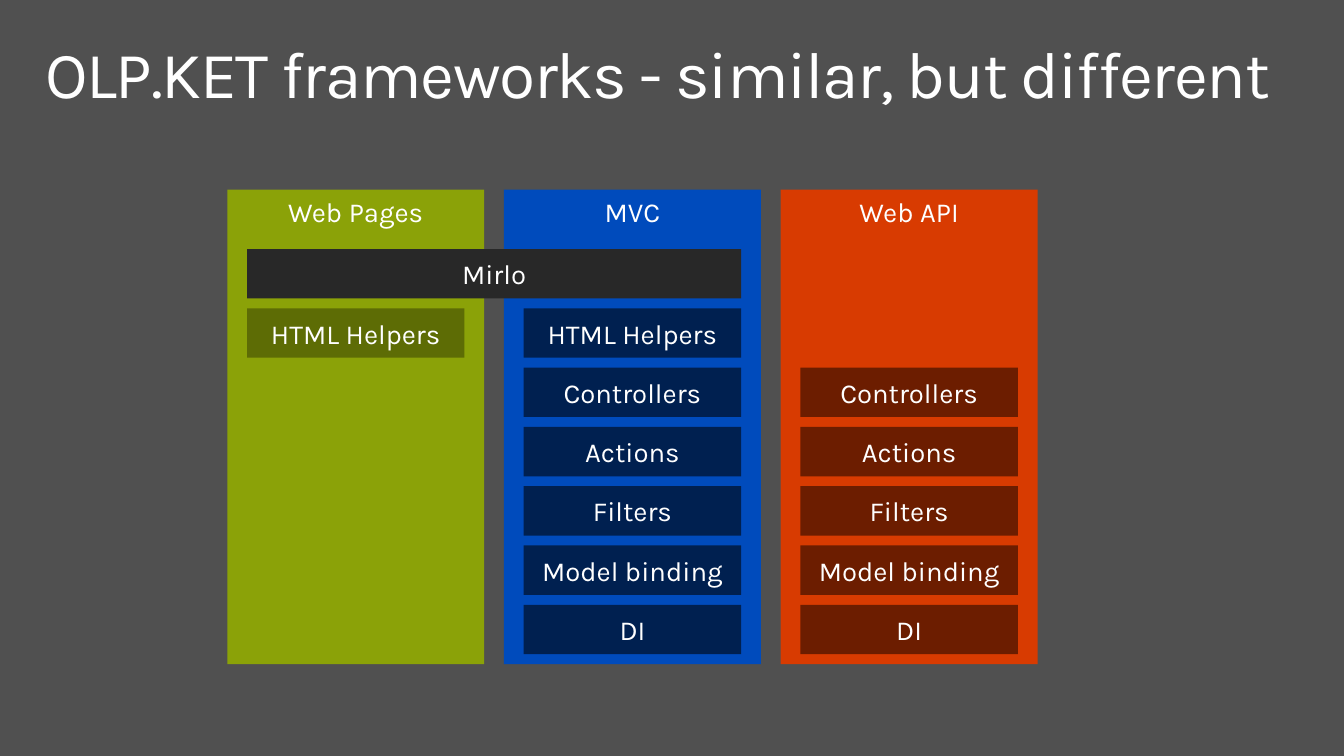
"""Build a slide comparing the parts of three web frameworks."""
from pptx import Presentation
from pptx.dml.color import RGBColor
from pptx.enum import shapes, text
from pptx.util import Inches, Pt

BACKGROUND = RGBColor(0x50, 0x50, 0x50)
WHITE = RGBColor(0xFF, 0xFF, 0xFF)
GREEN = RGBColor(0x8B, 0xA2, 0x08)
DARK_GREEN = RGBColor(0x5D, 0x6C, 0x05)
BLUE = RGBColor(0x00, 0x4B, 0xBC)
DARK_BLUE = RGBColor(0x00, 0x20, 0x50)
ORANGE = RGBColor(0xD8, 0x3B, 0x01)
DARK_ORANGE = RGBColor(0x6C, 0x1D, 0x00)
CHARCOAL = RGBColor(0x28, 0x28, 0x28)

HEADLINE = "OLP.KET frameworks - similar, but different"
SHARED_ENGINE = "Mirlo"
FEATURES = ["HTML Helpers", "Controllers", "Actions", "Filters", "Model binding", "DI"]
FRAMEWORKS = [
    ("Web Pages", GREEN, DARK_GREEN, FEATURES[:1]),
    ("MVC", BLUE, DARK_BLUE, FEATURES),
    ("Web API", ORANGE, DARK_ORANGE, FEATURES[1:]),
]

PANEL_LEFT, PANEL_TOP, PANEL_WIDTH, PANEL_HEIGHT = 2.3, 1.92, 2.6, 4.8
PANEL_GAP = PADDING = 0.2
PANEL_STEP = PANEL_WIDTH + PANEL_GAP
FEATURE_WIDTH = PANEL_WIDTH - 2 * PADDING
ROW_TOP, ROW_HEIGHT, ROW_STEP = 2.52, 0.5, 0.6


def write(holder, words, size=20, align=text.PP_ALIGN.CENTER,
          anchor=text.MSO_ANCHOR.MIDDLE, side=0, edge=0.05, line_spacing=None, tracking=None):
    """Put formatted text into a shape or placeholder."""
    frame = holder.text_frame
    frame.word_wrap = True
    frame.auto_size = text.MSO_AUTO_SIZE.NONE
    frame.vertical_anchor = anchor
    frame.margin_left = frame.margin_right = Inches(side)
    frame.margin_top = frame.margin_bottom = Inches(edge)
    paragraph = frame.paragraphs[0]
    paragraph.alignment = align
    paragraph.line_spacing = line_spacing
    run = paragraph.add_run()
    run.text = words
    run.font.name = "Karla"
    run.font.size = Pt(size)
    run.font.color.rgb = WHITE
    if tracking is not None:
        run.font._element.set("spc", str(tracking))


def add_block(slide, words, left, top, width, height, color, **text_format):
    """Draw a flat labelled rectangle."""
    block = slide.shapes.add_shape(shapes.MSO_SHAPE.RECTANGLE, Inches(left), Inches(top),
                                   Inches(width), Inches(height))
    block.shadow.inherit = False
    block.fill.solid()
    block.fill.fore_color.rgb = color
    block.line.fill.background()
    write(block, words, **text_format)


def main():
    """Lay out the slide and save it."""
    deck = Presentation()
    deck.slide_width, deck.slide_height = Inches(13.6), Inches(7.65)
    slide = deck.slides.add_slide(deck.slide_layouts[5])
    slide.background.fill.solid()
    slide.background.fill.fore_color.rgb = BACKGROUND

    headline = slide.shapes.title
    headline.left, headline.top = Inches(0.3), Inches(0.32)
    headline.width, headline.height = Inches(13), Inches(1)
    write(headline, HEADLINE, size=48, align=text.PP_ALIGN.LEFT, anchor=text.MSO_ANCHOR.TOP,
          side=0.16, edge=0.1, line_spacing=0.9, tracking=-100)

    for column, (framework, color, _, _) in enumerate(FRAMEWORKS):
        add_block(slide, framework, PANEL_LEFT + column * PANEL_STEP, PANEL_TOP,
                  PANEL_WIDTH, PANEL_HEIGHT, color, anchor=text.MSO_ANCHOR.TOP)

    feature_left = PANEL_LEFT + PADDING
    add_block(slide, SHARED_ENGINE, feature_left, ROW_TOP,
              PANEL_STEP + FEATURE_WIDTH, ROW_HEIGHT, CHARCOAL)

    for column, (_, _, dark_color, features) in enumerate(FRAMEWORKS):
        for feature in features:
            row = FEATURES.index(feature) + 1
            add_block(slide, feature, feature_left + column * PANEL_STEP,
                      ROW_TOP + row * ROW_STEP, FEATURE_WIDTH, ROW_HEIGHT, dark_color)

    deck.save("out.pptx")


if __name__ == "__main__":
    main()
